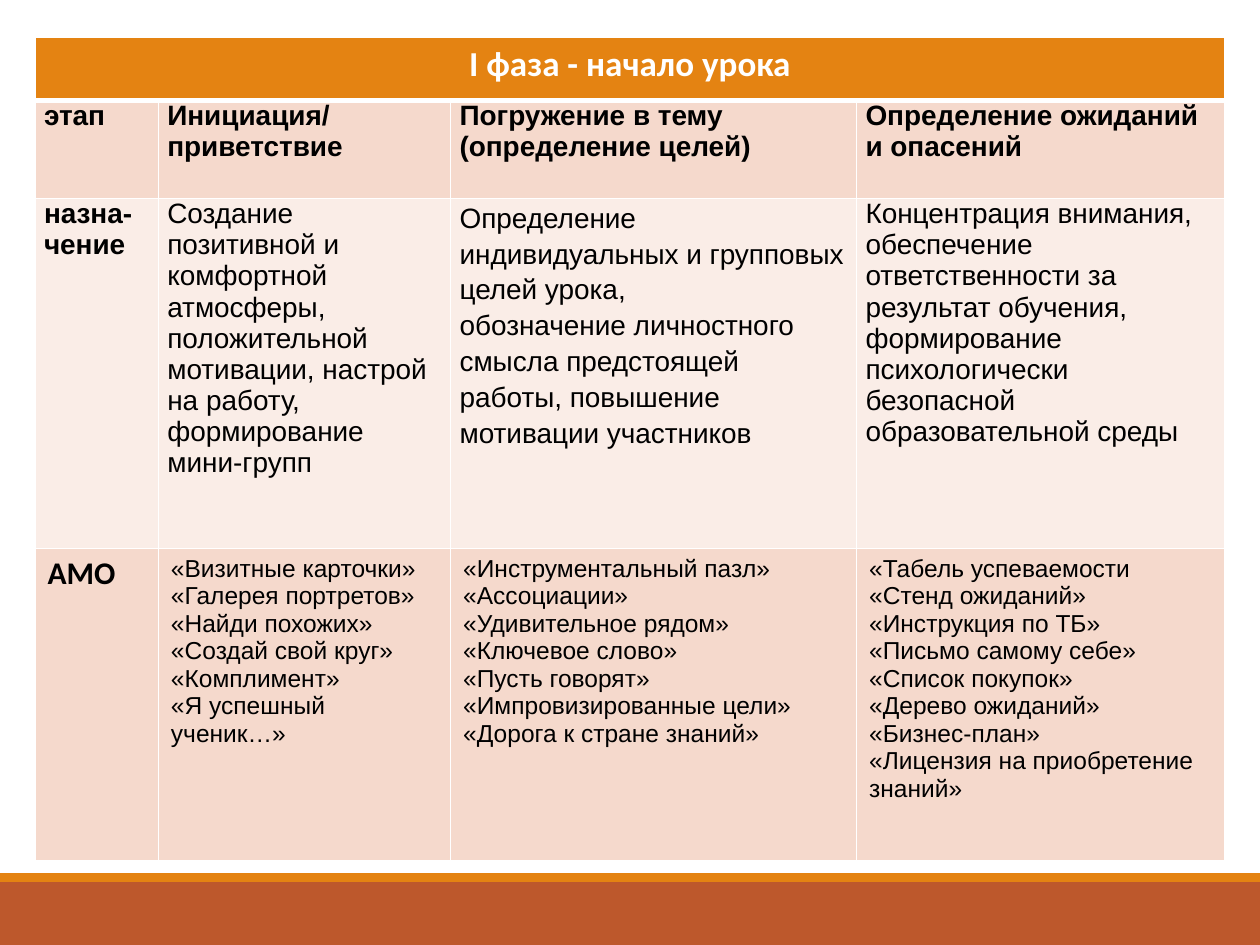
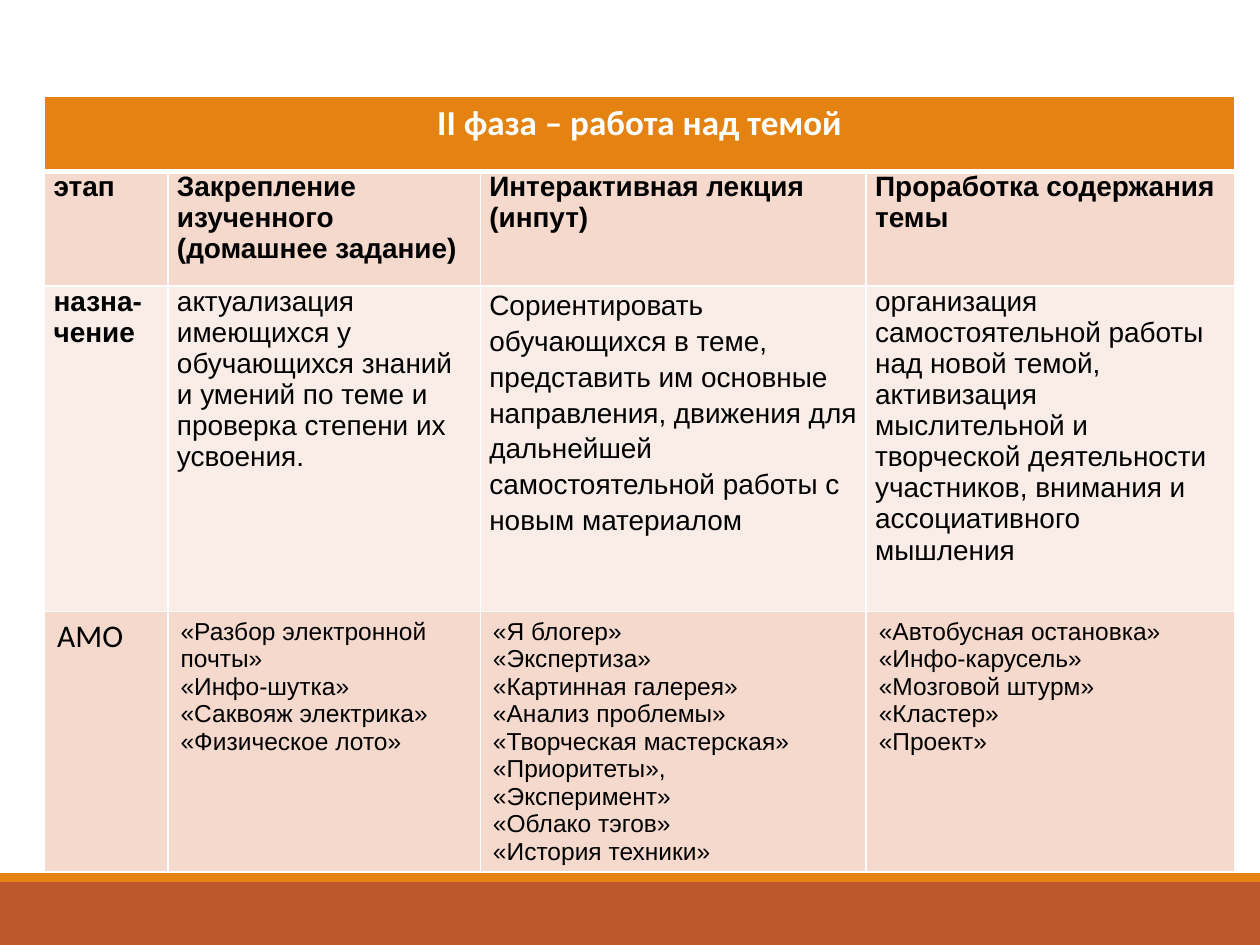
from dataclasses import dataclass

from lxml.etree import SubElement
from pptx import Presentation
from pptx.dml.color import RGBColor
from pptx.enum.shapes import MSO_SHAPE
from pptx.enum.text import PP_ALIGN
from pptx.oxml.ns import qn
from pptx.util import Pt

ORANGE = RGBColor(0xE4, 0x83, 0x12)
RUST = RGBColor(0xBD, 0x58, 0x2C)
PEACH = RGBColor(0xF5, 0xD9, 0xCC)
PALE_PEACH = RGBColor(0xFA, 0xED, 0xE7)
WHITE = RGBColor(0xFF, 0xFF, 0xFF)
BLACK = RGBColor(0x00, 0x00, 0x00)

SLIDE_WIDTH, SLIDE_HEIGHT = 720, 540
MIDDLE_COLUMN = 2
BORDER, HEADER_BORDER = 1, 3
ROW_FILLS = (ORANGE, PEACH, PALE_PEACH, PEACH)


@dataclass(frozen=True)
class Band:
    top: float
    height: float
    color: RGBColor


@dataclass(frozen=True)
class Stage:
    """One column: each text holds one paragraph per line."""
    name: str
    purpose: str
    methods: str


@dataclass(frozen=True)
class Phase:
    title: str
    left: float
    top: float
    height: float
    column_widths: tuple[float, ...]
    row_heights: tuple[float, ...]
    methods_label_bold: bool
    stages: tuple[Stage, ...]


BANDS = (Band(504, 36, RUST), Band(499, 5, ORANGE))

PHASES = (
    Phase(
        "I фаза - начало урока", 20, 21, 475,
        (70.5, 167, 232, 210.5), (36.5, 56, 200, 178.5), True,
        (
            Stage(
                "Инициация/\nприветствие",
                "Создание позитивной и комфортной\n"
                "атмосферы, положительной мотивации, настрой на работу,\n"
                "формирование мини-групп",
                "«Визитные карточки»\n«Галерея портретов»\n«Найди похожих»\n"
                "«Создай свой круг»\n«Комплимент»\n«Я успешный ученик…»",
            ),
            Stage(
                "Погружение в тему (определение целей)",
                "Определение индивидуальных и групповых целей урока,\n"
                "обозначение личностного смысла предстоящей работы, "
                "повышение мотивации участников",
                "«Инструментальный пазл»\n«Ассоциации»\n«Удивительное рядом»\n"
                "«Ключевое слово»\n«Пусть говорят»\n«Импровизированные цели»\n"
                "«Дорога к стране знаний»",
            ),
            Stage(
                "Определение ожиданий и опасений",
                "Концентрация внимания, обеспечение ответственности "
                "за результат обучения,\n"
                "формирование психологически безопасной образовательной среды",
                "«Табель успеваемости\n«Стенд ожиданий»\n«Инструкция по ТБ»\n"
                "«Письмо самому себе»\n«Список покупок»\n«Дерево ожиданий»\n"
                "«Бизнес-план»\n«Лицензия на приобретение знаний»",
            ),
        ),
    ),
    Phase(
        "II фаза – работа над темой", 25.5, 55, 452,
        (70.5, 178.5, 220.5, 210.5), (43, 65.5, 186, 132), False,
        (
            Stage(
                "Закрепление изученного (домашнее задание)",
                "актуализация имеющихся у обучающихся знаний и умений по теме "
                "и проверка степени их усвоения.",
                "«Разбор электронной почты»\n«Инфо-шутка»\n"
                "«Саквояж электрика»\n«Физическое лото»",
            ),
            Stage(
                "Интерактивная лекция (инпут)",
                "Сориентировать обучающихся в теме, представить им основные "
                "направления, движения для дальнейшей самостоятельной работы "
                "с новым материалом",
                "«Я блогер»\n«Экспертиза»\n«Картинная галерея»\n"
                "«Анализ проблемы»\n«Творческая мастерская»\n«Приоритеты»,\n"
                "«Эксперимент»\n«Облако тэгов»\n«История техники»",
            ),
            Stage(
                "Проработка содержания темы",
                "организация самостоятельной работы над новой темой, "
                "активизация мыслительной и творческой деятельности участников, "
                "внимания и ассоциативного мышления",
                "«Автобусная остановка»\n«Инфо-карусель»\n«Мозговой штурм»\n"
                "«Кластер»\n«Проект»",
            ),
        ),
    ),
)


def draw_band(slide, band: Band) -> None:
    shape = slide.shapes.add_shape(
        MSO_SHAPE.RECTANGLE, 0, Pt(band.top), Pt(SLIDE_WIDTH), Pt(band.height)
    )
    shape.shadow.inherit = False
    shape.fill.solid()
    shape.fill.fore_color.rgb = band.color
    shape.line.fill.background()


def set_borders(cell, top: float, bottom: float) -> None:
    properties = cell._tc.get_or_add_tcPr()
    widths = {"a:lnL": BORDER, "a:lnR": BORDER, "a:lnT": top, "a:lnB": bottom}
    for position, (tag, width) in enumerate(widths.items()):
        line = SubElement(properties, qn(tag), w=str(Pt(width)))
        fill = SubElement(line, qn("a:solidFill"))
        SubElement(fill, qn("a:srgbClr"), val=str(WHITE))
        properties.insert(position, line)


def write_text(
    cell, text: str, *, size: float = 16, font: str = "Arial",
    color: RGBColor = BLACK, bold: bool = False,
    align: PP_ALIGN = PP_ALIGN.LEFT, line_spacing: float = 1.0,
    margin_x: float = 7.2, margin_y: float = 3.6,
) -> None:
    cell.margin_left = cell.margin_right = Pt(margin_x)
    cell.margin_top = cell.margin_bottom = Pt(margin_y)
    cell.text_frame.text = text
    for paragraph in cell.text_frame.paragraphs:
        paragraph.alignment = align
        paragraph.line_spacing = line_spacing
        for run in paragraph.runs:
            run.font.size = Pt(size)
            run.font.name = font
            run.font.bold = bold
            run.font.color.rgb = color


def draw_phase(slide, phase: Phase) -> None:
    frame = slide.shapes.add_table(
        len(phase.row_heights), len(phase.column_widths),
        Pt(phase.left), Pt(phase.top),
        Pt(sum(phase.column_widths)), Pt(phase.height),
    )
    table = frame.table
    table.horz_banding = False
    for column, width in zip(table.columns, phase.column_widths):
        column.width = Pt(width)
    for index, (row, height, color) in enumerate(
        zip(table.rows, phase.row_heights, ROW_FILLS)
    ):
        row.height = Pt(height)
        for cell in row.cells:
            cell.fill.solid()
            cell.fill.fore_color.rgb = color
            set_borders(
                cell,
                top=HEADER_BORDER if index == 1 else BORDER,
                bottom=HEADER_BORDER if index == 0 else BORDER,
            )
    frame.height = Pt(phase.height)

    title_cell = table.cell(0, 0)
    title_cell.merge(table.cell(0, len(phase.column_widths) - 1))
    write_text(title_cell, phase.title, size=20, font="Calibri", color=WHITE,
               bold=True, align=PP_ALIGN.CENTER)

    tight = {"margin_x": 5.15, "margin_y": 0}
    write_text(table.cell(1, 0), "этап", bold=True, **tight)
    write_text(table.cell(2, 0), "назна-чение", bold=True, **tight)
    write_text(table.cell(3, 0), "АМО", size=18, font="Calibri",
               bold=phase.methods_label_bold)
    for column, stage in enumerate(phase.stages, start=1):
        write_text(table.cell(1, column), stage.name, bold=True, **tight)
        write_text(table.cell(2, column), stage.purpose,
                   line_spacing=1.15 if column == MIDDLE_COLUMN else 1.0, **tight)
        write_text(table.cell(3, column), stage.methods, size=14)


def main() -> None:
    presentation = Presentation()
    presentation.slide_width = Pt(SLIDE_WIDTH)
    presentation.slide_height = Pt(SLIDE_HEIGHT)
    blank_layout = presentation.slide_layouts.get_by_name("Blank")
    for phase in PHASES:
        slide = presentation.slides.add_slide(blank_layout)
        for band in BANDS:
            draw_band(slide, band)
        draw_phase(slide, phase)
    presentation.save("out.pptx")


if __name__ == "__main__":
    main()
